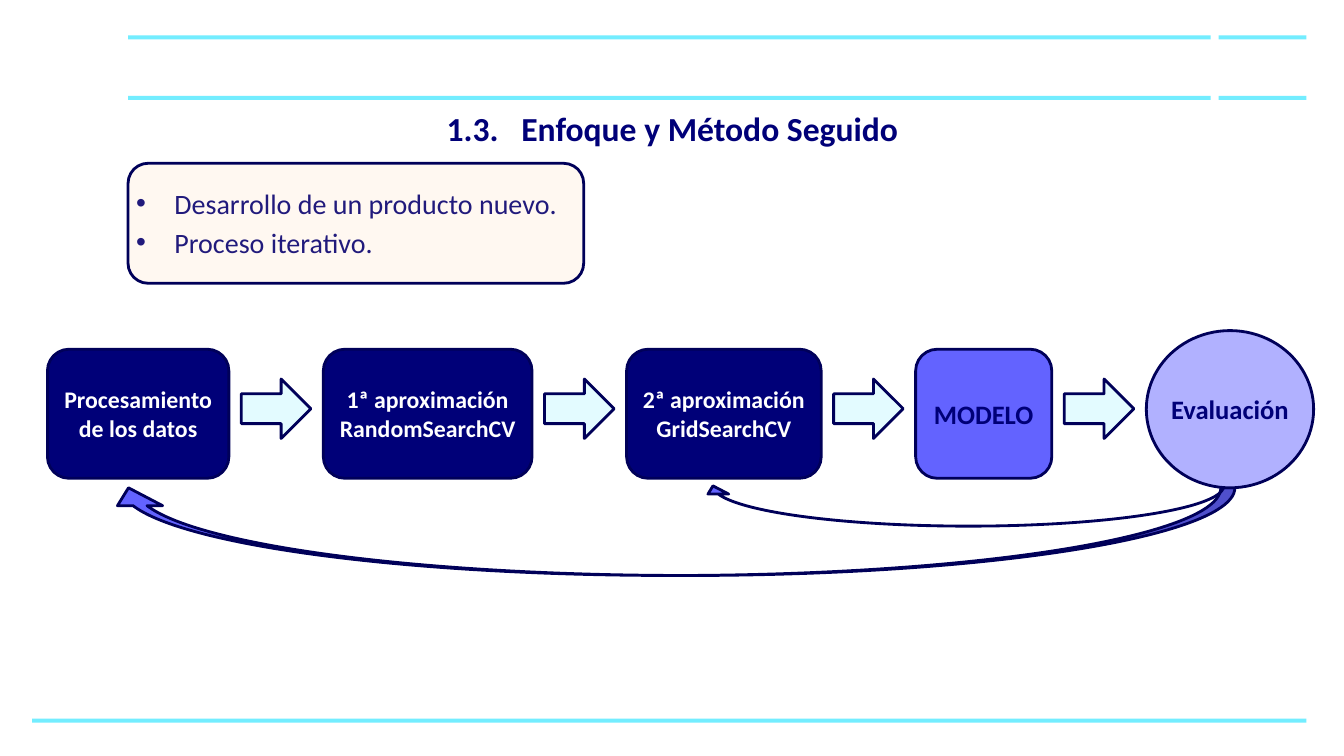
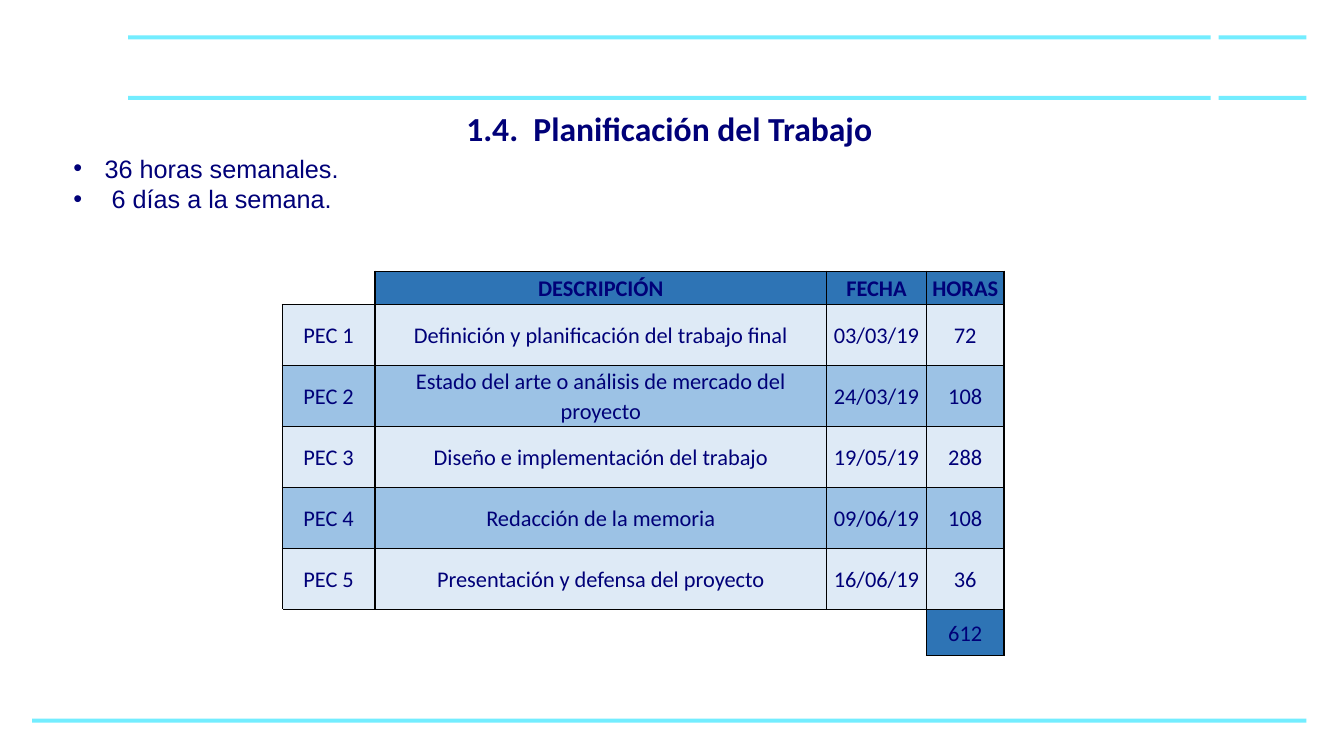
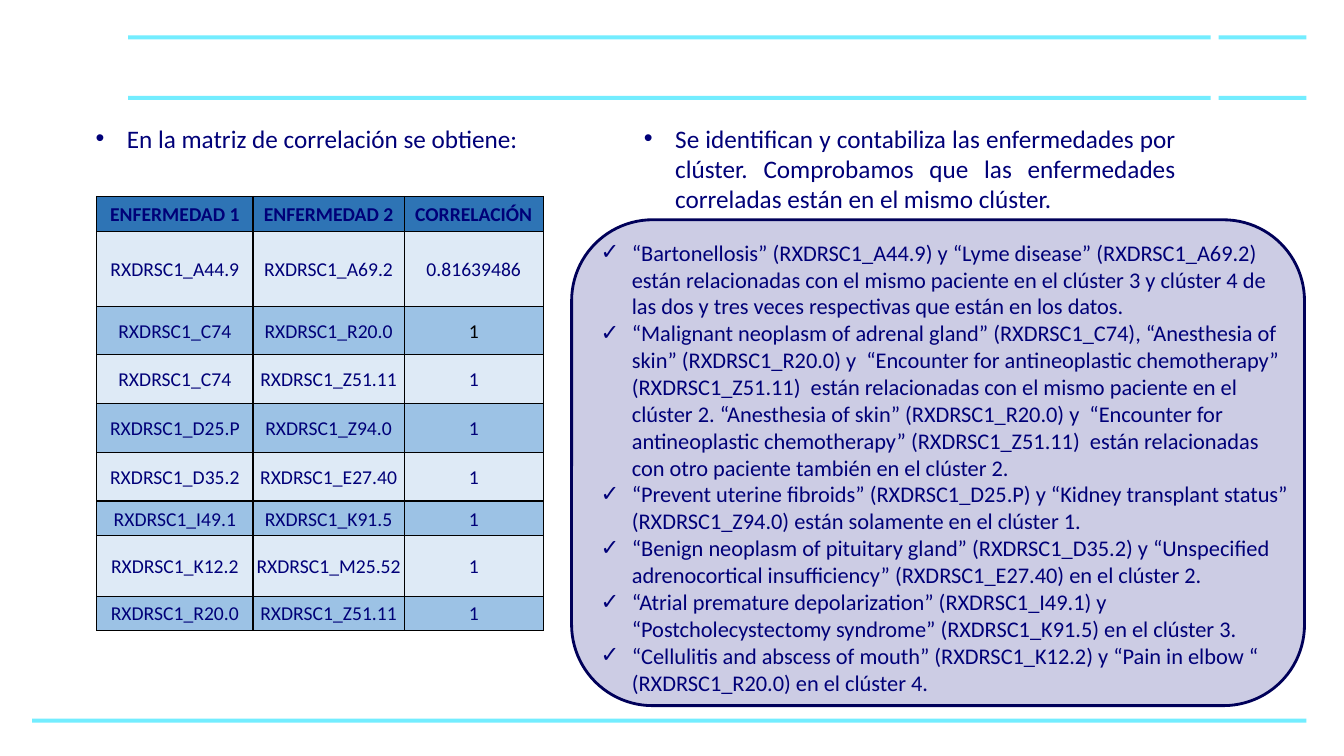
from lxml import etree
from pptx import Presentation
from pptx.dml.color import RGBColor
from pptx.enum.shapes import MSO_SHAPE
from pptx.enum.text import MSO_ANCHOR, MSO_AUTO_SIZE, PP_ALIGN
from pptx.oxml.ns import qn
from pptx.util import Inches, Pt

RECTANGLE = MSO_SHAPE.RECTANGLE
ROUNDED = MSO_SHAPE.ROUNDED_RECTANGLE
ELLIPSE = MSO_SHAPE.OVAL
RIGHT_ARROW = MSO_SHAPE.RIGHT_ARROW
RETURN_ARROW = MSO_SHAPE.CURVED_UP_ARROW
TOP, MIDDLE = MSO_ANCHOR.TOP, MSO_ANCHOR.MIDDLE
LEFT, CENTER, JUSTIFY = PP_ALIGN.LEFT, PP_ALIGN.CENTER, PP_ALIGN.JUSTIFY

COLORS = {
    "navy": "000078", "outline": "000059", "cyan": "73EDFF", "ice": "E3FBFF",
    "violet": "6363FF", "lilac": "B1B1FF", "peach": "FFCC99", "white": "FFFFFF",
    "black": "000000", "header": "2E74B5", "light": "DEEAF6", "medium": "9CC2E5",
}

presentation = Presentation()
presentation.slide_width = Inches(13.33)
presentation.slide_height = Inches(7.5)
COLUMN = presentation.slide_width / 100
ROW = presentation.slide_height / 100
title_layout = presentation.slide_layouts[5]
blank_layout = presentation.slide_layouts[6]


def add_figure(slide, kind, box, fill, opacity=100, line="outline"):
    left, top, width, height = box
    shape = slide.shapes.add_shape(
        kind, int(left * COLUMN), int(top * ROW), int(width * COLUMN), int(height * ROW))
    shape.shadow.inherit = False
    shape.fill.solid()
    shape.fill.fore_color.rgb = RGBColor.from_string(COLORS[fill])
    if opacity < 100:
        color = shape.element.spPr.find(qn("a:solidFill"))[0]
        etree.SubElement(color, qn("a:alpha")).set("val", str(opacity * 1000))
    if line:
        shape.line.color.rgb = RGBColor.from_string(COLORS[line])
        shape.line.width = Pt(2)
    else:
        shape.line.fill.background()
    return shape


def write(frame, lines, size, color="navy", bold=False, font="Calibri", align=LEFT,
          spacing=1.0, bullet=None, indent=0.31, margin=0.31):
    for number, line in enumerate(lines):
        paragraph = frame.paragraphs[0] if number == 0 else frame.add_paragraph()
        if bullet:
            properties = paragraph._p.get_or_add_pPr()
            properties.set("marL", str(Inches(margin)))
            properties.set("indent", str(-Inches(indent)))
            bullet_color = etree.SubElement(properties, qn("a:buClr"))
            etree.SubElement(bullet_color, qn("a:srgbClr")).set("val", COLORS["navy"])
            etree.SubElement(properties, qn("a:buFont")).set("typeface", "Arial")
            etree.SubElement(properties, qn("a:buChar")).set("char", bullet)
        paragraph.alignment = align
        paragraph.line_spacing = spacing
        run = paragraph.add_run()
        run.text = line
        for name, value in {"size": Pt(size), "bold": bold, "name": font}.items():
            setattr(run.font, name, value)
        run.font.color.rgb = RGBColor.from_string(COLORS[color])


flow_slide = presentation.slides.add_slide(title_layout)
plan_slide = presentation.slides.add_slide(title_layout)
cluster_slide = presentation.slides.add_slide(blank_layout)

bands = [(2.4, 95.07, 94.8)]
bands += [(left, top, width) for left, width in ((9.53, 80.55), (90.68, 6.52))
          for top in (12.67, 4.67)]
master_tree = presentation.slide_master.element.cSld.spTree
for number, (left, top, width) in enumerate(bands):
    band = add_figure(flow_slide, RECTANGLE, (left, top, width, 0.53), "cyan", line=None)
    band.element.nvSpPr.cNvPr.set("id", str(101 + number))
    master_tree.append(band.element)

titles = [
    (flow_slide, "1.3.   Enfoque y Método Seguido", 95.25, 8.4),
    (plan_slide, "1.4.  Planificación del Trabajo", 94.8, 6.93),
]
for slide, text, width, height in titles:
    title = slide.shapes.title
    title.left, title.top = int(2.4 * COLUMN), int(12.53 * ROW)
    title.width, title.height = int(width * COLUMN), int(height * ROW)
    frame_format = {"word_wrap": True, "auto_size": MSO_AUTO_SIZE.NONE, "vertical_anchor": TOP}
    frame_format.update({"margin_" + side: Inches(0.13)
                         for side in ("left", "top", "right", "bottom")})
    for name, value in frame_format.items():
        setattr(title.text_frame, name, value)
    write(title.text_frame, [text], 24, bold=True, align=CENTER)

panel = add_figure(cluster_slide, ROUNDED, (42.53, 29.07, 54.53, 64.27), "navy", 20)

text_boxes = [
    (flow_slide, (9.15, 22.27, 69.08, 12.4), 0.13,
     ["Desarrollo de un producto nuevo.", "Proceso iterativo."],
     {"size": 20, "bullet": "•", "indent": 0.38, "margin": 0.38, "spacing": 1.15}),
    (plan_slide, (4.73, 19.6, 54.15, 9.47), None,
     ["36 horas semanales.", " 6 días a la semana."],
     {"size": 18, "bullet": "•", "font": "Arial"}),
    (cluster_slide, (6.38, 15.6, 38.33, 13.47), None,
     ["En la matriz de correlación se obtiene:"],
     {"size": 18, "bullet": "•"}),
    (cluster_slide, (47.18, 15.6, 41.03, 13.47), None,
     ["Se identifican y contabiliza las enfermedades por clúster. Comprobamos que las "
      "enfermedades correladas están en el mismo clúster."],
     {"size": 18, "bullet": "•", "align": JUSTIFY}),
    (cluster_slide, (40.2, 30.93, 56.85, 62.4), None,
     ["“Bartonellosis” (RXDRSC1_A44.9) y “Lyme disease” (RXDRSC1_A69.2) están relacionadas "
      "con el mismo paciente en el clúster 3 y clúster 4 de las dos y tres veces "
      "respectivas que están en los datos.",
      "“Malignant neoplasm of adrenal gland” (RXDRSC1_C74), “Anesthesia of skin” "
      "(RXDRSC1_R20.0) y  “Encounter for antineoplastic chemotherapy” (RXDRSC1_Z51.11)  "
      "están relacionadas con el mismo paciente en el clúster 2. “Anesthesia of skin” "
      "(RXDRSC1_R20.0) y  “Encounter for antineoplastic chemotherapy” (RXDRSC1_Z51.11)  "
      "están relacionadas con otro paciente también en el clúster 2.",
      "“Prevent uterine fibroids” (RXDRSC1_D25.P) y “Kidney transplant status” "
      "(RXDRSC1_Z94.0) están solamente en el clúster 1.",
      "“Benign neoplasm of pituitary gland” (RXDRSC1_D35.2) y “Unspecified adrenocortical "
      "insufficiency” (RXDRSC1_E27.40) en el clúster 2.",
      "“Atrial premature depolarization” (RXDRSC1_I49.1) y “Postcholecystectomy syndrome” "
      "(RXDRSC1_K91.5) en el clúster 3.",
      "“Cellulitis and abscess of mouth” (RXDRSC1_K12.2) y “Pain in elbow “ "
      "(RXDRSC1_R20.0) en el clúster 4."],
     {"size": 16, "bullet": "✓", "margin": 0.81}),
]
for slide, (left, top, width, height), inset, lines, text_format in text_boxes:
    text_box = slide.shapes.add_textbox(
        int(left * COLUMN), int(top * ROW), int(width * COLUMN), int(height * ROW))
    text_box.text_frame.word_wrap = True
    if inset:
        for side in ("left", "top", "right", "bottom"):
            setattr(text_box.text_frame, "margin_" + side, Inches(inset))
    write(text_box.text_frame, lines, **text_format)

add_figure(flow_slide, ROUNDED, (9.53, 21.6, 33.9, 15.87), "peach", 13)

return_arrows = [
    ((7.88, 64.53, 84, 11.6), 0.16),
    ((52.28, 64.27, 38.78, 5.33), 0),
]
for box, thickness in return_arrows:
    arrow = add_figure(flow_slide, RETURN_ARROW, box, "violet")
    for index, value in enumerate((thickness, 0.515, 0.204)):
        arrow.adjustments[index] = value
    arrow.element.spPr.find(qn("a:xfrm")).set("flipH", "1")

STEP_GAP, ARROW_WIDTH = 7.03, 5.18
steps = [
    (ROUNDED, 13.5, 46.2, 17.07, "navy", "white", 17, ["Procesamiento de los datos"]),
    (ROUNDED, 15.53, 46.2, 17.07, "navy", "white", 17, ["1ª aproximación", "RandomSearchCV"]),
    (ROUNDED, 14.48, 46.2, 17.07, "navy", "white", 17, ["2ª aproximación", "GridSearchCV"]),
    (ROUNDED, 10.13, 46.2, 17.07, "violet", "navy", 19, ["MODELO"]),
    (ELLIPSE, 12.45, 43.73, 20.8, "lilac", "navy", 19, ["Evaluación"]),
]
left = 3.53
for number, (kind, width, top, height, fill, color, size, lines) in enumerate(steps):
    if number:
        arrow_left = left - (STEP_GAP + ARROW_WIDTH) / 2
        add_figure(flow_slide, RIGHT_ARROW, (arrow_left, 50.13, ARROW_WIDTH, 7.87), "ice")
    step = add_figure(flow_slide, kind, (left, top, width, height), fill)
    frame_format = {"word_wrap": True, "vertical_anchor": MIDDLE, "margin_left": 0,
                    "margin_right": 0, "margin_top": 0, "margin_bottom": 0}
    for name, value in frame_format.items():
        setattr(step.text_frame, name, value)
    write(step.text_frame, lines, size, color, bold=True, align=CENTER)
    left += width + STEP_GAP

plan_rows = [
    ["", "DESCRIPCIÓN", "FECHA", "HORAS"],
    ["PEC 1", "Definición y planificación del trabajo final", "03/03/19", "72"],
    ["PEC 2", "Estado del arte o análisis de mercado del proyecto", "24/03/19", "108"],
    ["PEC 3", "Diseño e implementación del trabajo", "19/05/19", "288"],
    ["PEC 4", "Redacción de la memoria", "09/06/19", "108"],
    ["PEC 5", "Presentación y defensa del proyecto", "16/06/19", "36"],
    ["", "", "", "612"],
]
disease_rows = [["ENFERMEDAD 1", "ENFERMEDAD 2", "CORRELACIÓN"]]
disease_rows += [["RXDRSC1_" + first, "RXDRSC1_" + second, value] for first, second, value in (
    ("A44.9", "A69.2", "0.81639486"), ("C74", "R20.0", "1"), ("C74", "Z51.11", "1"),
    ("D25.P", "Z94.0", "1"), ("D35.2", "E27.40", "1"), ("I49.1", "K91.5", "1"),
    ("K12.2", "M25.52", "1"), ("R20.0", "Z51.11", "1"))]
tables = [
    (plan_slide, 21, 35.87, [6.9, 33.6, 7.43, 5.78], [4.4] + [8.07] * 5 + [6.13],
     plan_rows, 16, 0.05, {(0, 0): "RB", (6, 0): "T", (6, 1): "T", (6, 2): "TR"},
     {(6, 3): "header"}, {}),
    (cluster_slide, 7.2, 26, [11.63, 11.25, 10.35], [4.6, 9.9] + [6.45] * 4 + [4.6, 8, 4.53],
     disease_rows, 14, 0.03, {}, {}, {(2, 2): "black"}),
]
for slide, left, top, widths, heights, rows, size, inset, open_cells, fills, inks in tables:
    table = slide.shapes.add_table(
        len(rows), len(widths), int(left * COLUMN), int(top * ROW),
        int(sum(widths) * COLUMN), int(sum(heights) * ROW)).table
    table.first_row = table.horz_banding = False
    for column, width in zip(table.columns, widths):
        column.width = int(width * COLUMN)
    for row, height in zip(table.rows, heights):
        row.height = int(height * ROW)
    for row_index, texts in enumerate(rows):
        row_fill = "header" if row_index == 0 else ("medium", "light")[row_index % 2]
        for column_index, text in enumerate(texts):
            place = (row_index, column_index)
            cell = table.cell(*place)
            cell_format = {"margin_left": Inches(inset), "margin_right": Inches(inset),
                           "margin_top": 0, "margin_bottom": 0, "vertical_anchor": MIDDLE}
            for name, value in cell_format.items():
                setattr(cell, name, value)
            properties = cell._tc.get_or_add_tcPr()
            for side in "LRTB":
                if side in open_cells.get(place, "LRTB"):
                    border = etree.SubElement(properties, qn("a:ln" + side))
                    border.set("w", str(Pt(1)))
                    border_fill = etree.SubElement(border, qn("a:solidFill"))
                    etree.SubElement(border_fill, qn("a:srgbClr")).set("val", COLORS["black"])
            if text:
                cell.fill.solid()
                cell.fill.fore_color.rgb = RGBColor.from_string(
                    COLORS[fills.get(place, row_fill)])
                write(cell.text_frame, [text], size, inks.get(place, "navy"),
                      bold=row_index == 0, align=CENTER, spacing=1.07)
            else:
                cell.fill.background()
    if slide is plan_slide:
        table.cell(6, 0).merge(table.cell(6, 2))

presentation.save("out.pptx")
